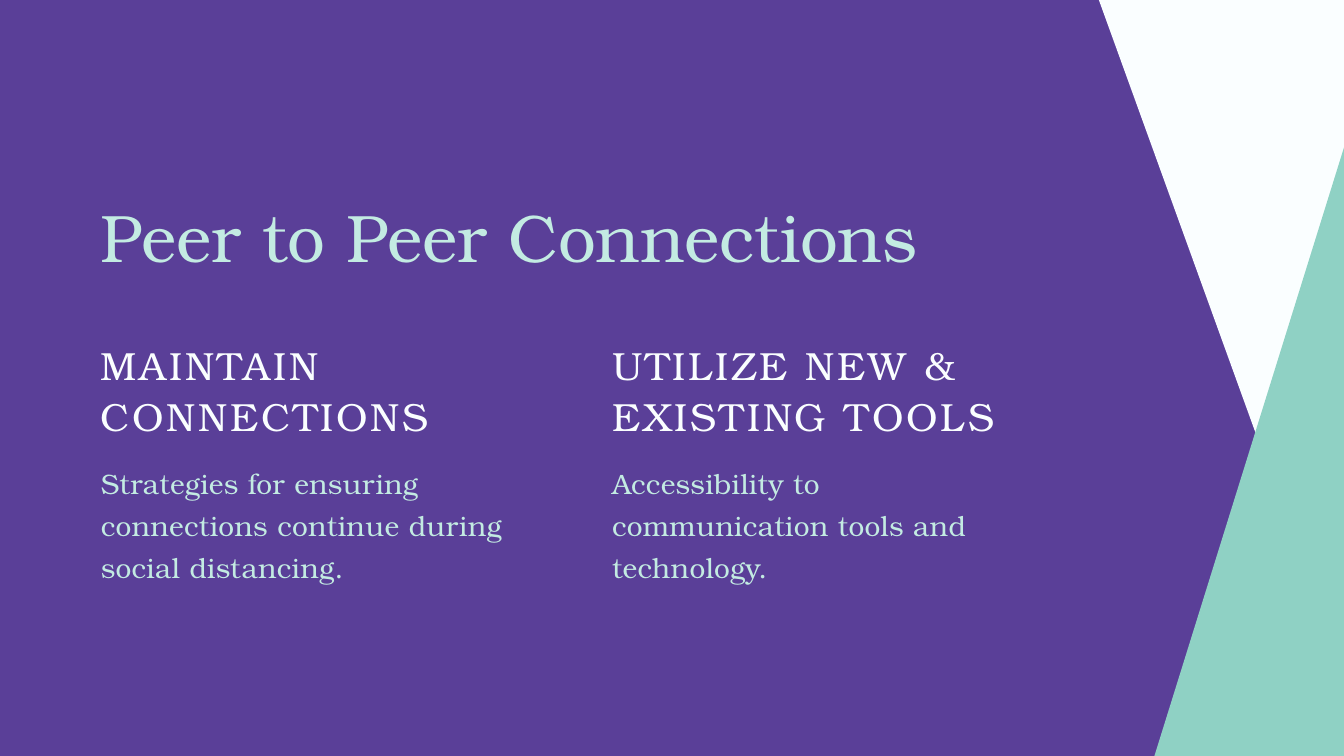
from lxml.etree import SubElement
from pptx import Presentation
from pptx.dml.color import RGBColor
from pptx.enum.shapes import MSO_SHAPE as Kind
from pptx.enum.text import MSO_ANCHOR as Anchor, MSO_AUTO_SIZE as Fit, PP_ALIGN as Align
from pptx.oxml.ns import qn
from pptx.util import Inches, Pt

# Content
TITLE = "Peer to Peer Connections"
TOPICS = [
    ("MAINTAIN CONNECTIONS",
     "Strategies for ensuring connections continue during social distancing."),
    ("UTILIZE NEW & EXISTING TOOLS",
     "Accessibility to communication tools and technology."),
]

# Look: size, line pitch and letter spacing in points, then colour
FONT = "TeX Gyre Bonum"
PURPLE, WHITE, MINT, PALE = "5A3F98", "FAFEFF", "8FD1C4", "C3EBE2"
HEAD = (48, 57.6, 0, PALE)
TOPIC = (28, 36.4, 2.1, WHITE)
BODY = (20, 30, 0.2, PALE)

# Grid, in inches
WIDE, HIGH = 13.33, 7.5
LEFT, STEP, COL = 1, 5.07, 4.08

# Tilted bands that bleed off the right edge: colour, place, turn
BANDS = [
    (WHITE, (10.75, 0.18, 5.33, 3.44), 70.1),
    (MINT, (9.86, 2.78, 8.29, 2.95), 107.3),
]


def color(code):
    return RGBColor.from_string(code)


def write(box, text, place, look):
    size, pitch, gap, code = look
    box.left, box.top, box.width, box.height = map(Inches, place)
    frame = box.text_frame
    frame.text = text
    frame.word_wrap = True
    frame.auto_size = Fit.NONE
    frame.vertical_anchor = Anchor.TOP
    frame.margin_left = frame.margin_right = 0
    frame.margin_top = frame.margin_bottom = 0
    para = frame.paragraphs[0]
    props = para._p.get_or_add_pPr()
    props.set("marL", "0")
    props.set("indent", "0")
    SubElement(props, qn("a:buNone"))
    para.alignment = Align.LEFT
    para.line_spacing = Pt(pitch)
    para.space_before = para.space_after = Pt(0)
    font = para.font
    font.name, font.size, font.bold = FONT, Pt(size), False
    font.color.rgb = color(code)
    props.find(qn("a:defRPr")).set("spc", str(round(gap * 100)))


def band(slide, code, place, turn):
    shape = slide.shapes.add_shape(Kind.RECTANGLE, *map(Inches, place))
    shape.rotation = turn
    shape.shadow.inherit = False
    shape.fill.solid()
    shape.fill.fore_color.rgb = color(code)
    shape.line.fill.background()


def main():
    deck = Presentation()
    deck.slide_width, deck.slide_height = Inches(WIDE), Inches(HIGH)
    slide = deck.slides.add_slide(deck.slide_layouts.get_by_name("Comparison"))
    back = slide.background.fill
    back.solid()
    back.fore_color.rgb = color(PURPLE)

    # Bands on the right edge
    for code, place, turn in BANDS:
        band(slide, code, place, turn)

    # Title and two topic columns
    write(slide.shapes.title, TITLE, (LEFT, 1.94, 9.95, 0.81), HEAD)
    slots = slide.placeholders
    for n, (topic, body) in enumerate(TOPICS):
        x = LEFT + n * STEP
        write(slots[2 * n + 1], topic, (x, 3.35, COL, 1.01), TOPIC)
        write(slots[2 * n + 2], body, (x, 4.54, COL, 1.26), BODY)

    deck.save("out.pptx")


if __name__ == "__main__":
    main()
